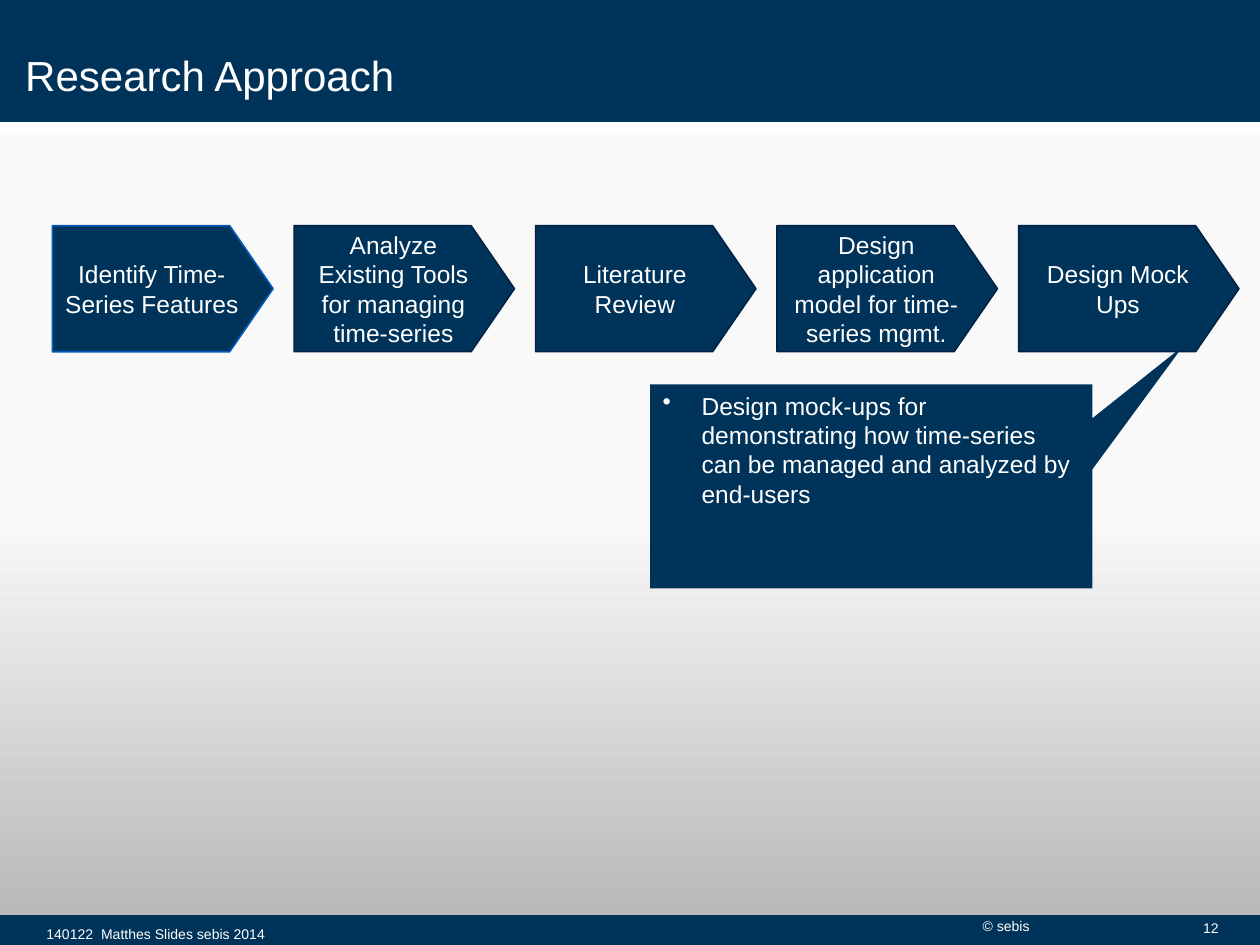
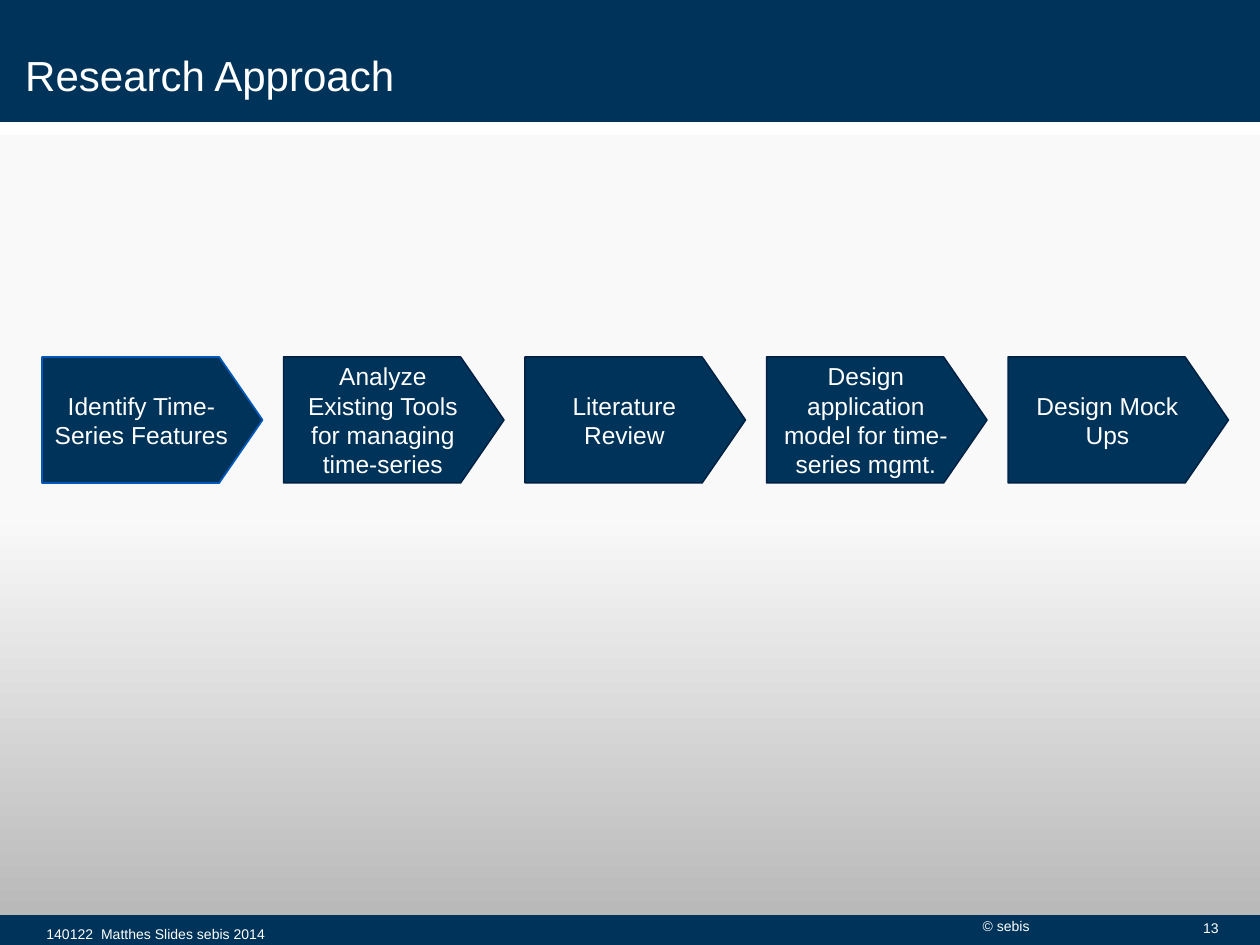
"""Build two research approach slides with a chevron process row."""
from dataclasses import dataclass
from typing import Optional

import pptx
import pptx.dml.color
import pptx.enum.shapes
import pptx.enum.text
import pptx.oxml
import pptx.oxml.ns
import pptx.util

SHAPE = pptx.enum.shapes.MSO_SHAPE
ANCHOR = pptx.enum.text.MSO_ANCHOR
ALIGN = pptx.enum.text.PP_ALIGN


@dataclass(frozen=True)
class Theme:
    """Colours, font and type sizes shared by the slides."""
    navy: str = "003359"
    outline: str = "002143"
    accent: str = "0058B8"
    white: str = "FFFFFF"
    panel: str = "F9F9F9"
    fade_from: str = "F8F8F8"
    fade_to: str = "B9B9B9"
    font: str = "Arial"
    title_size: float = 24
    body_size: float = 14
    footer_size: float = 8


@dataclass(frozen=True)
class Box:
    """A rectangle in inches."""
    left: float
    top: float
    width: float
    height: float

    def emu(self) -> list[int]:
        """Return the four lengths for python-pptx."""
        return [pptx.util.Inches(v) for v in (self.left, self.top, self.width, self.height)]


@dataclass(frozen=True)
class Band:
    """A background rectangle, solid or fading to a second colour."""
    box: Box
    color: str
    fade_to: Optional[str] = None
    line: Optional[str] = None


@dataclass(frozen=True)
class Label:
    """A text box of one line."""
    box: Box
    text: str
    size: float
    anchor: ANCHOR = ANCHOR.MIDDLE
    inset: Optional[float] = None


@dataclass(frozen=True)
class Callout:
    """A bulleted speech box pointing at a step."""
    box: Box
    text: str
    tip: tuple[float, float]


@dataclass(frozen=True)
class ProcessSlide:
    """Grid position of the step row, page number and optional callout."""
    column: float
    row: float
    page: int
    callout: Optional[Callout] = None


T = Theme()
WIDTH, HEIGHT = 10, 7.5
CELL = 1 / 12
STEP_COLS, STEP_ROWS, STEP_PITCH = 21, 12, 23
STEP_POINT = 0.344
BULLET_INDENT = 0.31

BANDS = [
    Band(Box(0, 7.21, WIDTH, 0.29), T.navy, line=T.navy),
    Band(Box(0, 0.01, WIDTH, 0.95), T.navy, line=T.navy),
    Band(Box(0, 4.15, WIDTH, 3.11), T.fade_from, fade_to=T.fade_to),
    Band(Box(0, 1.07, WIDTH, 3.08), T.panel),
]
LABELS = [
    Label(Box(0.2, 0, 8.58, 0.79), "Research Approach", T.title_size, ANCHOR.BOTTOM, 0),
    Label(Box(7.7, 7.19, 1.76, 0.32), "© sebis", T.footer_size),
    Label(Box(0.27, 7.25, 4.73, 0.32), "140122  Matthes Slides sebis 2014", T.footer_size),
]
PAGE_BOX = Box(9.45, 7.25, 0.55, 0.32)
STEPS = [
    "Identify Time-Series Features",
    "Analyze Existing Tools for managing time-series",
    "Literature Review",
    "Design application model for time-series mgmt.",
    "Design Mock Ups",
]
SLIDES = [
    ProcessSlide(5, 21.5, 12, Callout(
        Box(5.16, 3.05, 3.51, 1.62),
        "Design mock-ups for demonstrating how time-series can be managed "
        "and analyzed by end-users",
        (0.705, -0.687))),
    ProcessSlide(4, 34, 13),
]


def rgb(color: str) -> pptx.dml.color.RGBColor:
    """Turn a hex string into a colour."""
    return pptx.dml.color.RGBColor.from_string(color)


def add_shape(s, kind: SHAPE, box: Box, fill: str, line: Optional[str] = None,
              weight: float = 1):
    """Add a flat preset shape with an optional outline."""
    sp = s.shapes.add_shape(kind, *box.emu())
    sp.shadow.inherit = False
    sp.fill.solid()
    sp.fill.fore_color.rgb = rgb(fill)
    if line:
        sp.line.color.rgb = rgb(line)
        sp.line.width = pptx.util.Pt(weight)
    else:
        sp.line.fill.background()
    return sp


def write(sp, text: str, size: float, anchor: ANCHOR, align: ALIGN = ALIGN.LEFT,
          bullet: bool = False) -> None:
    """Write one white paragraph into a shape."""
    tf = sp.text_frame
    tf.word_wrap = True
    tf.vertical_anchor = anchor
    p = tf.paragraphs[0]
    p.alignment = align
    if bullet:
        pPr = p._p.get_or_add_pPr()
        indent = pptx.util.Inches(BULLET_INDENT)
        pPr.set("marL", str(indent))
        pPr.set("indent", str(-indent))
        bu = pptx.oxml.parse_xml(
            f'<a:buChar {pptx.oxml.ns.nsdecls("a")} char="•"/>')
        pPr.append(bu)
    r = p.add_run()
    r.text = text
    r.font.name = T.font
    r.font.size = pptx.util.Pt(size)
    r.font.color.rgb = rgb(T.white)


def add_band(s, band: Band) -> None:
    """Draw a background band."""
    sp = add_shape(s, SHAPE.RECTANGLE, band.box, band.color, band.line, 1.35)
    if band.fade_to:
        sp.fill.gradient()
        sp.fill.gradient_angle = 270
        for stop, color, position in zip(
                sp.fill.gradient_stops, (band.color, band.fade_to), (0, 1)):
            stop.color.rgb = rgb(color)
            stop.position = position


def add_label(s, label: Label) -> None:
    """Draw a text box."""
    sp = s.shapes.add_textbox(*label.box.emu())
    tf = sp.text_frame
    if label.inset is not None:
        inset = pptx.util.Inches(label.inset)
        tf.margin_left = tf.margin_right = tf.margin_top = tf.margin_bottom = inset
    write(sp, label.text, label.size, label.anchor)


def add_steps(s, column: float, row: float) -> None:
    """Draw the row of steps, the first one with an accent outline."""
    for i, text in enumerate(STEPS):
        box = Box((column + i * STEP_PITCH) * CELL, row * CELL,
                  STEP_COLS * CELL, STEP_ROWS * CELL)
        line, weight = (T.outline, 0.85) if i else (T.accent, 1)
        sp = add_shape(s, SHAPE.PENTAGON, box, T.navy, line, weight)
        sp.adjustments[0] = STEP_POINT
        write(sp, text, T.body_size, ANCHOR.MIDDLE, ALIGN.CENTER)


def add_callout(s, callout: Callout) -> None:
    """Draw the speech box."""
    sp = add_shape(s, SHAPE.RECTANGULAR_CALLOUT, callout.box, T.navy)
    for i, value in enumerate(callout.tip):
        sp.adjustments[i] = value
    write(sp, callout.text, T.body_size, ANCHOR.TOP, bullet=True)


def build_slide(prs, spec_row: ProcessSlide) -> None:
    """Add one process slide."""
    s = prs.slides.add_slide(prs.slide_layouts[6])
    for band in BANDS:
        add_band(s, band)
    for label in LABELS:
        add_label(s, label)
    add_label(s, Label(PAGE_BOX, str(spec_row.page), T.footer_size, ANCHOR.TOP))
    add_steps(s, spec_row.column, spec_row.row)
    if spec_row.callout:
        add_callout(s, spec_row.callout)


def main() -> None:
    """Build and save the presentation."""
    prs = pptx.Presentation()
    prs.slide_width = pptx.util.Inches(WIDTH)
    prs.slide_height = pptx.util.Inches(HEIGHT)
    for process in SLIDES:
        build_slide(prs, process)
    prs.save("out.pptx")


if __name__ == "__main__":
    main()
